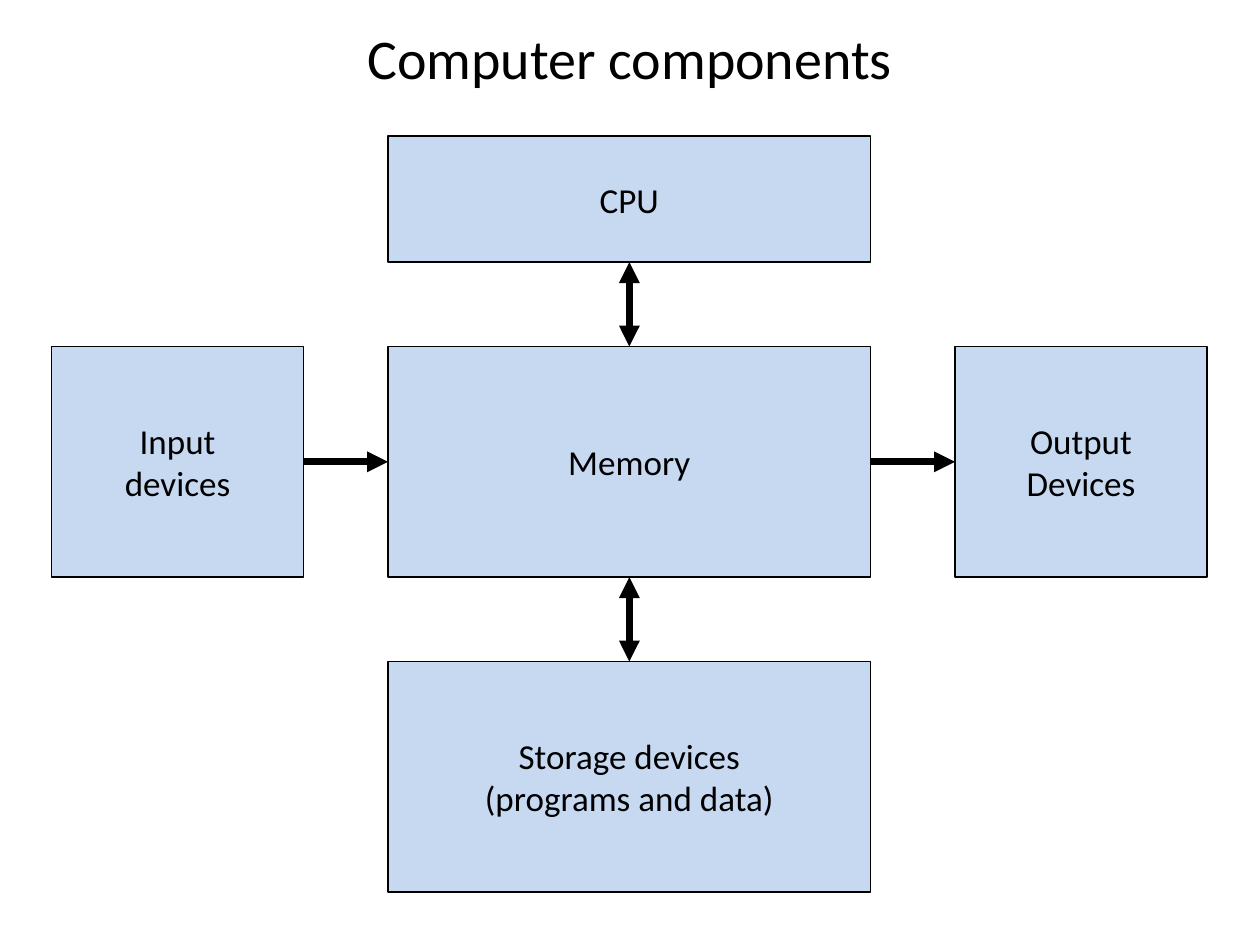
from lxml import etree
from pptx import Presentation, util as u
from pptx.dml.color import RGBColor
from pptx.enum import shapes, text
from pptx.oxml.ns import qn

TITLE = "Computer components"
BOXES = {
    "memory": ("Memory", "mid", "row"),
    "cpu": ("CPU", "mid", "top"),
    "store": ("Storage devices\n(programs and data)", "mid", "base"),
    "input": ("Input\ndevices", "left", "row"),
    "output": ("Output\nDevices", "right", "row"),
}
LINKS = [
    ("memory", "store", "down", True),
    ("cpu", "memory", "down", True),
    ("input", "memory", "across", False),
    ("memory", "output", "across", False),
]
THEME = {
    "font": "Calibri", "ink": RGBColor(0, 0, 0),
    "fill": RGBColor(0xC6, 0xD9, 0xF1),
    "title": 32, "body": 20, "edge": 0.75, "arrow": 4,
}
GAP = 0.67
SIDE, WIDE, TALL, LOW = 2, 3.83, 1.83, 1
LEFT, TOP = 0.41, 1.08
MID = LEFT + SIDE + GAP
ROW = TOP + LOW + GAP
COLS = {"left": (LEFT, SIDE), "mid": (MID, WIDE), "right": (MID + WIDE + GAP, SIDE)}
ROWS = {"top": (TOP, LOW), "row": (ROW, TALL), "base": (ROW + TALL + GAP, TALL)}


def apply(item, form):
    for name, val in form.items():
        setattr(item, name, val)


def write(shape, words, size, wrap):
    frame = shape.text_frame
    frame.text = words
    apply(frame, {"word_wrap": wrap, "vertical_anchor": text.MSO_ANCHOR.MIDDLE})
    for para in frame.paragraphs:
        para.alignment = text.PP_ALIGN.CENTER
        for run in para.runs:
            apply(run.font, {"name": THEME["font"], "size": u.Pt(size)})
            run.font.color.rgb = THEME["ink"]


def stroke(line, width):
    line.color.rgb = THEME["ink"]
    line.width = u.Pt(width)


def add_box(slide, words, col, row):
    (x, w), (y, h) = COLS[col], ROWS[row]
    box = slide.shapes.add_shape(
        shapes.MSO_SHAPE.RECTANGLE, *map(u.Inches, (x, y, w, h)))
    box.shadow.inherit = False
    box.fill.solid()
    box.fill.fore_color.rgb = THEME["fill"]
    stroke(box.line, THEME["edge"])
    write(box, words, THEME["body"], False)
    return box


def add_link(slide, start, end, way, both):
    if way == "down":
        x = start.left + start.width // 2
        ends = (x, start.top + start.height, x, end.top)
    else:
        y = start.top + start.height // 2
        ends = (start.left + start.width, y, end.left, y)
    link = slide.shapes.add_connector(shapes.MSO_CONNECTOR.STRAIGHT, *ends)
    stroke(link.line, THEME["arrow"])
    edge = link.line._get_or_add_ln()
    for tag in ("a:headEnd", "a:tailEnd") if both else ("a:tailEnd",):
        etree.SubElement(edge, qn(tag), type="triangle")
    etree.SubElement(link._element.spPr, qn("a:effectLst"))


def main():
    deck = Presentation()
    apply(deck, {"slide_width": u.Inches(10), "slide_height": u.Inches(7.5)})
    slide = deck.slides.add_slide(deck.slide_layouts[5])
    title = slide.shapes.title
    apply(title, {"left": 0, "top": u.Inches(-0.17),
                  "width": deck.slide_width, "height": u.Inches(1.25)})
    write(title, TITLE, THEME["title"], True)
    made = {key: add_box(slide, *box) for key, box in BOXES.items()}
    for start, end, way, both in LINKS:
        add_link(slide, made[start], made[end], way, both)
    deck.save("out.pptx")


if __name__ == "__main__":
    main()
